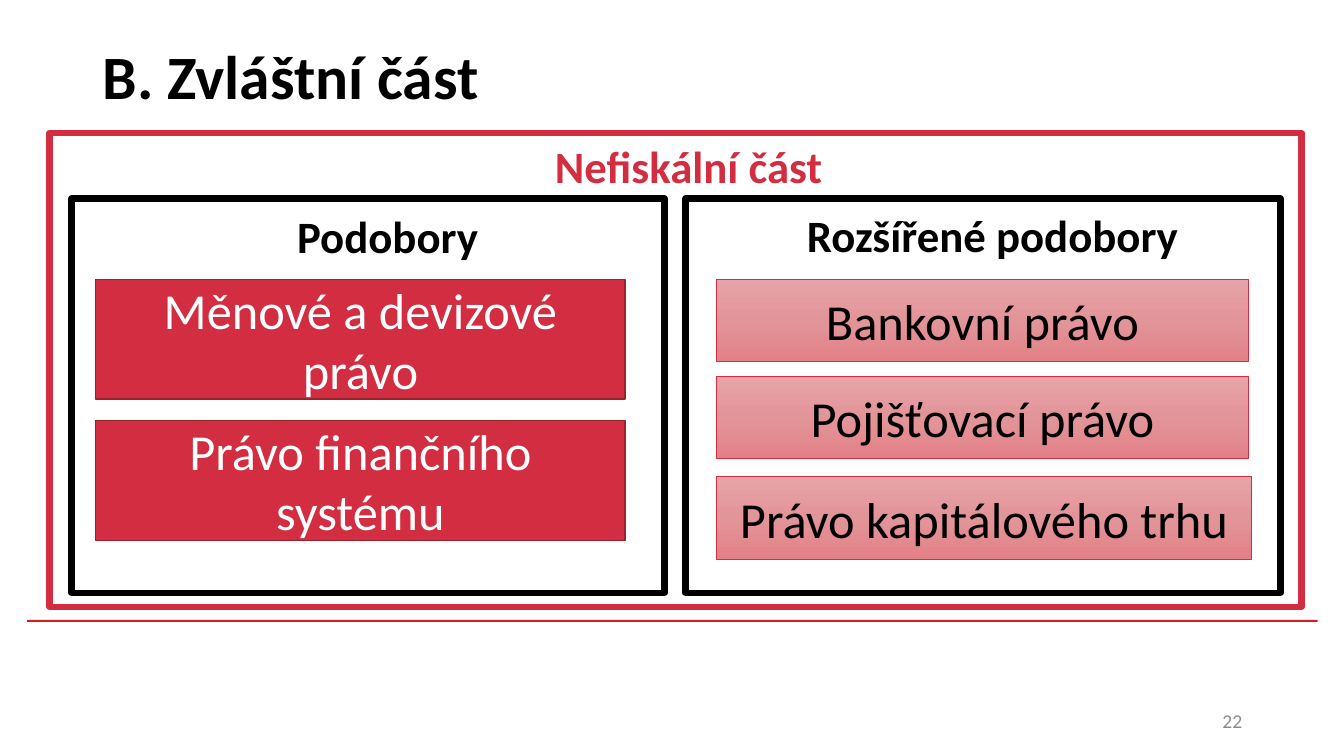
from copy import deepcopy
from dataclasses import dataclass
from typing import Optional

from pptx import Presentation
from pptx.dml.color import RGBColor
from pptx.enum.shapes import MSO_SHAPE
from pptx.enum.text import MSO_ANCHOR, PP_ALIGN
from pptx.oxml.ns import qn
from pptx.util import Inches, Pt

RECT = MSO_SHAPE.RECTANGLE
TOP, MIDDLE = MSO_ANCHOR.TOP, MSO_ANCHOR.MIDDLE
LEFT, CENTER, RIGHT = PP_ALIGN.LEFT, PP_ALIGN.CENTER, PP_ALIGN.RIGHT

BLACK = RGBColor(0x00, 0x00, 0x00)
WHITE = RGBColor(0xFF, 0xFF, 0xFF)
GREY = RGBColor(0x8C, 0x8C, 0x8C)
RED = RGBColor(0xD2, 0x2D, 0x40)
DARK_RED = RGBColor(0x9B, 0x21, 0x2F)
RULE_RED = RGBColor(0xCD, 0x1F, 0x21)
PINKS = (RGBColor(0xE7, 0xA3, 0xA7), RGBColor(0xE2, 0x95, 0x99),
         RGBColor(0xE3, 0x81, 0x86))

Box = tuple[float, float, float, float]


@dataclass
class Panel:
    box: Box
    fill: Optional[RGBColor]  # None gives the pink gradient
    line: Optional[RGBColor] = None
    width: float = 0
    text: str = ""
    color: RGBColor = BLACK


@dataclass
class Label:
    box: Box
    text: str
    size: float = 32
    color: RGBColor = BLACK
    bold: bool = True
    align: PP_ALIGN = CENTER
    anchor: MSO_ANCHOR = TOP


FRAMES = [
    Panel((0.27, 6.15, 12.8, 0.02), RULE_RED),
    Panel((0.49, 1.32, 12.42, 4.7), WHITE, RED, 4.5),
    Panel((6.8, 1.97, 5.9, 3.91), WHITE, BLACK, 4.5),
    Panel((0.71, 1.97, 5.88, 3.91), WHITE, BLACK, 4.5),
]
LABELS = [
    Label((0.92, 0.02, 11.5, 1.45), "B. Zvláštní část", 44, align=LEFT, anchor=MIDDLE),
    Label((9.42, 6.95, 3, 0.4), "22", 14, GREY, False, RIGHT, MIDDLE),
    Label((1.13, 1.33, 11.4, 0.64), "Nefiskální část", color=RED),
    Label((1.11, 2.02, 5.47, 0.64), "Podobory"),
    Label((7.11, 2.01, 5.47, 0.64), "Rozšířené podobory"),
]
BRANCHES = [
    Panel((0.95, top, 5.25, 1.19), RED, DARK_RED, 1, text, WHITE)
    for top, text in ((2.77, "Měnové a devizové právo"),
                      (4.17, "Právo finančního systému"))
]
EXTENDED_BRANCHES = [
    Panel((7.11, top, width, 0.82), None, RED, 0.5, text)
    for top, width, text in ((2.77, 5.27, "Bankovní právo"),
                             (3.73, 5.27, "Pojišťovací právo"),
                             (4.73, 5.3, "Právo kapitálového trhu"))
]


def write_text(sp, label: Label) -> None:
    tf = sp.text_frame
    tf.word_wrap = True
    tf.vertical_anchor = label.anchor
    p = tf.paragraphs[0]
    p.alignment = label.align
    r = p.add_run()
    r.text = label.text
    font_format = {"name": "Calibri", "size": Pt(label.size), "bold": label.bold}
    for name, value in font_format.items():
        setattr(r.font, name, value)
    r.font.color.rgb = label.color


def fill_pink(sp) -> None:
    """Fill with a three-stop gradient running from top to bottom."""
    sp.fill.gradient()
    sp.fill.gradient_angle = 270
    first = sp._element.spPr.find(".//" + qn("a:gs"))
    first.addnext(deepcopy(first))
    for stop, color, position in zip(sp.fill.gradient_stops, PINKS, (0, 0.5, 1)):
        stop.color.rgb = color
        stop.position = position


def add_panel(s, panel: Panel) -> None:
    sp = s.shapes.add_shape(RECT, *map(Inches, panel.box))
    sp.shadow.inherit = False
    if panel.fill is None:
        fill_pink(sp)
    else:
        sp.fill.solid()
        sp.fill.fore_color.rgb = panel.fill
    if panel.line is None:
        sp.line.fill.background()
    else:
        sp.line.color.rgb = panel.line
        sp.line.width = Pt(panel.width)
    if panel.text:
        write_text(sp, Label(panel.box, panel.text, 36, panel.color, False, anchor=MIDDLE))


def add_label(s, label: Label) -> None:
    write_text(s.shapes.add_textbox(*map(Inches, label.box)), label)


def main() -> None:
    prs = Presentation()
    prs.slide_width, prs.slide_height = Inches(13.33), Inches(7.5)
    s = prs.slides.add_slide(prs.slide_layouts[6])
    for frame in FRAMES:
        add_panel(s, frame)
    for label in LABELS:
        add_label(s, label)
    for branch in BRANCHES + EXTENDED_BRANCHES:
        add_panel(s, branch)
    prs.save("out.pptx")


if __name__ == "__main__":
    main()
